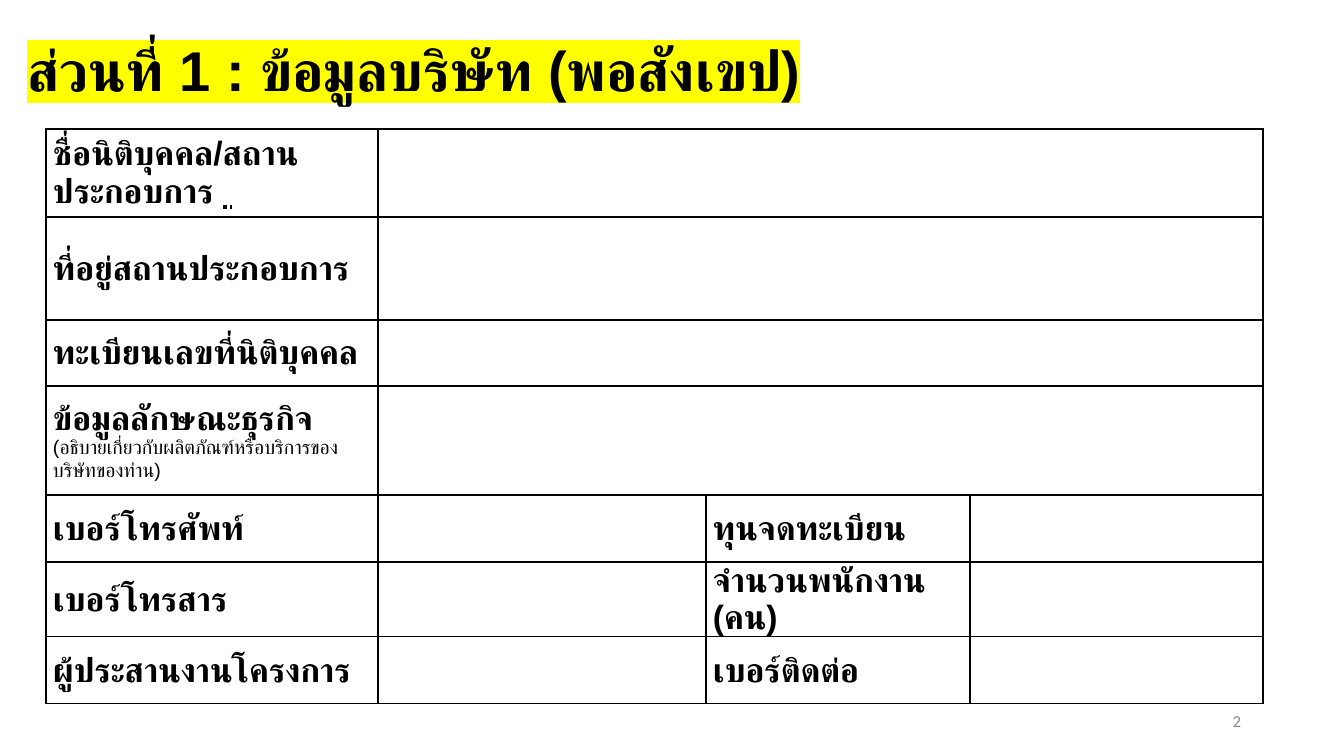
from dataclasses import dataclass

import pptx
import pptx.dml.color
import pptx.enum.text
import pptx.oxml.ns
import pptx.util
from lxml import etree

PX = 914400 / 100.8  # EMU in one px


@dataclass(frozen=True)
class Theme:
    ink: str = "000000"
    muted: str = "8C8C8C"
    highlight: str = "FFFF00"
    font: str = "Arial"
    number_font: str = "Calibri"
    title_size: int = 40
    label_size: int = 24
    hint_size: int = 14
    number_size: int = 12
    border_width: int = 1


THEME = Theme()

COLUMN_WIDTHS = [332, 328, 264, 293]
ROW_HEIGHTS = [88, 103, 66, 109, 67, 67, 67]
WIDE_ROWS = 4  # rows whose answer spans the remaining columns
LABELS = [
    ["ชื่อนิติบุคคล/สถานประกอบการ "],
    ["ที่อยู่สถานประกอบการ"],
    ["ทะเบียนเลขที่นิติบุคคล"],
    ["ข้อมูลลักษณะธุรกิจ "],
    ["เบอร์โทรศัพท์", "ทุนจดทะเบียน"],
    ["เบอร์โทรสาร", "จำนวนพนักงาน (คน)"],
    ["ผู้ประสานงานโครงการ", "เบอร์ติดต่อ"],
]
NAME_ROW, BUSINESS_ROW = 0, 3
BUSINESS_HINT = "(อธิบายเกี่ยวกับผลิตภัณฑ์หรือบริการของบริษัทของท่าน)"


def px(length):
    return pptx.util.Emu(round(length * PX))


def add_element(parent, tag, **attributes):
    return etree.SubElement(parent, pptx.oxml.ns.qn(tag), attributes)


def set_font(paragraph, name, size, color, bold=False):
    font = paragraph.font
    font.name = name
    font.size = pptx.util.Pt(size)
    font.bold = bold
    font.color.rgb = pptx.dml.color.RGBColor.from_string(color)
    # Thai letters take the complex-script typeface
    add_element(font._element, "a:cs", typeface=name)


def add_title(slide, text, box):
    title = slide.shapes.title
    title.left, title.top, title.width, title.height = map(px, box)
    title.text_frame.vertical_anchor = pptx.enum.text.MSO_ANCHOR.MIDDLE
    paragraph = title.text_frame.paragraphs[0]
    paragraph.alignment = pptx.enum.text.PP_ALIGN.LEFT
    paragraph.line_spacing = 0.9
    run = paragraph.add_run()
    run.text = text
    set_font(paragraph, THEME.font, THEME.title_size, THEME.ink, bold=True)
    highlight = add_element(run.font._element, "a:highlight")
    add_element(highlight, "a:srgbClr", val=THEME.highlight)


def style_cell(cell):
    properties = cell._tc.get_or_add_tcPr()
    for side in ("a:lnL", "a:lnR", "a:lnT", "a:lnB"):
        line = add_element(properties, side, w=str(pptx.util.Pt(THEME.border_width)))
        fill = add_element(line, "a:solidFill")
        add_element(fill, "a:srgbClr", val=THEME.ink)
    cell.fill.background()
    cell.vertical_anchor = pptx.enum.text.MSO_ANCHOR.MIDDLE
    cell.margin_left = cell.margin_right = px(7)
    cell.margin_top = cell.margin_bottom = 0


def add_label(cell, text):
    paragraph = cell.text_frame.paragraphs[0]
    paragraph.add_run().text = text
    set_font(paragraph, THEME.font, THEME.label_size, THEME.ink, bold=True)
    return paragraph


def add_company_table(slide, left, top):
    table = slide.shapes.add_table(
        len(ROW_HEIGHTS), len(COLUMN_WIDTHS), px(left), px(top),
        px(sum(COLUMN_WIDTHS)), px(sum(ROW_HEIGHTS))).table
    table.first_row = table.horz_banding = False
    for column, width in zip(table.columns, COLUMN_WIDTHS):
        column.width = px(width)
    for row, height in zip(table.rows, ROW_HEIGHTS):
        row.height = px(height)
    for cell in table.iter_cells():
        style_cell(cell)
    for row in range(WIDE_ROWS):
        table.cell(row, 1).merge(table.cell(row, len(COLUMN_WIDTHS) - 1))

    for row, labels in enumerate(LABELS):
        for index, label in enumerate(labels):
            paragraph = add_label(table.cell(row, 2 * index), label)
            if row == NAME_ROW:
                blank = paragraph.add_run()
                blank.text = " "
                blank.font.underline = pptx.enum.text.MSO_UNDERLINE.DOTTED_HEAVY_LINE
            elif row == BUSINESS_ROW:
                paragraph.add_line_break()
                hint = paragraph.add_run()
                hint.text = BUSINESS_HINT
                hint.font.size = pptx.util.Pt(THEME.hint_size)
                hint.font.bold = False


def add_slide_number(slide, number, box):
    frame = slide.shapes.add_textbox(*map(px, box)).text_frame
    frame.word_wrap = True
    frame.vertical_anchor = pptx.enum.text.MSO_ANCHOR.MIDDLE
    paragraph = frame.paragraphs[0]
    paragraph.alignment = pptx.enum.text.PP_ALIGN.RIGHT
    paragraph.add_run().text = str(number)
    set_font(paragraph, THEME.number_font, THEME.number_size, THEME.muted)


def add_company_slide(presentation):
    slide = presentation.slides.add_slide(
        presentation.slide_layouts.get_by_name("Title Only"))
    add_title(slide, "ส่วนที่ 1 : ข้อมูลบริษัท (พอสังเขป)", (17, 0, 1159, 146))
    add_company_table(slide, 46, 129)
    add_slide_number(slide, 2, (949, 701, 302, 40))


def main():
    presentation = pptx.Presentation()
    presentation.slide_width = px(1344)
    presentation.slide_height = px(756)
    add_company_slide(presentation)
    presentation.save("out.pptx")


if __name__ == "__main__":
    main()
